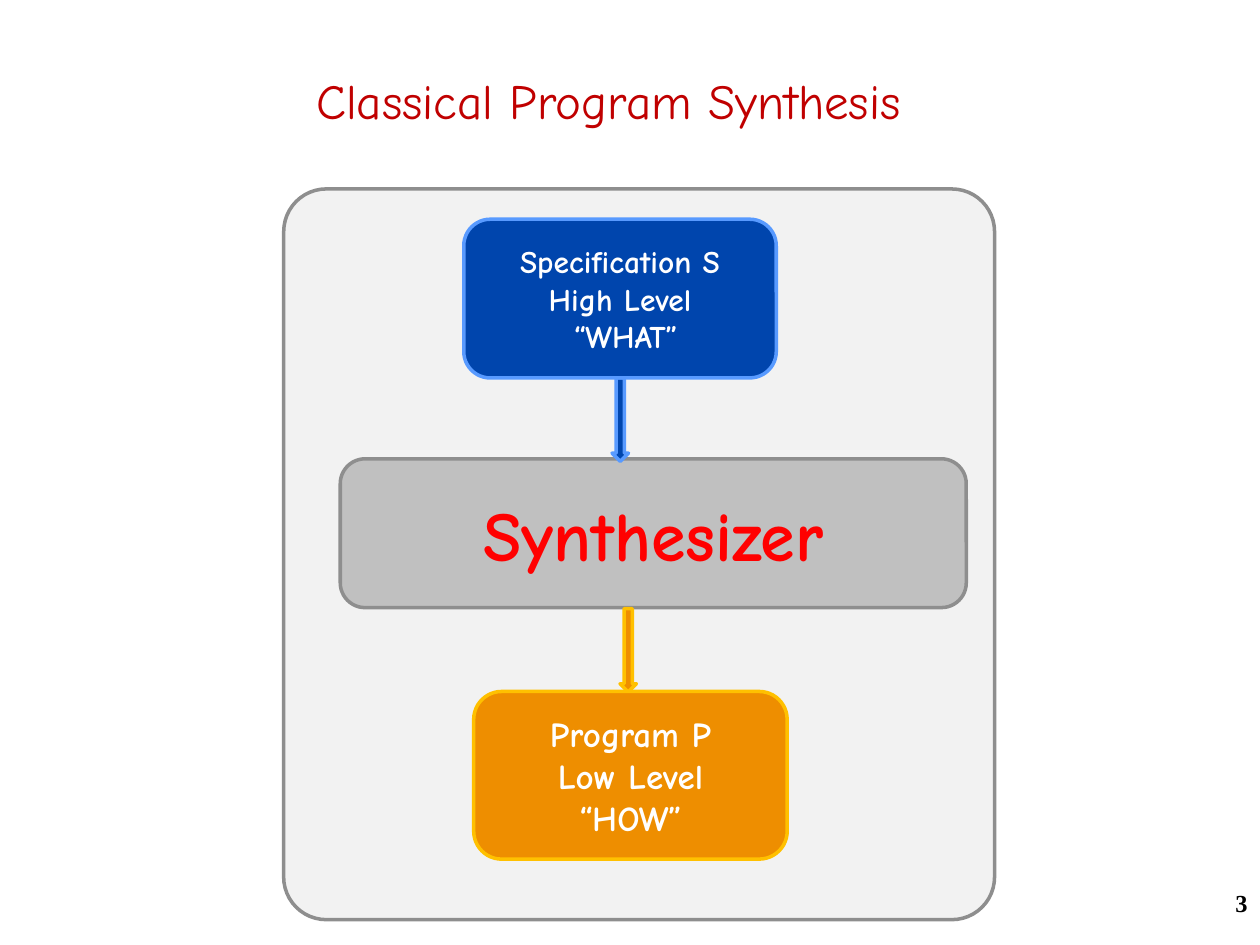
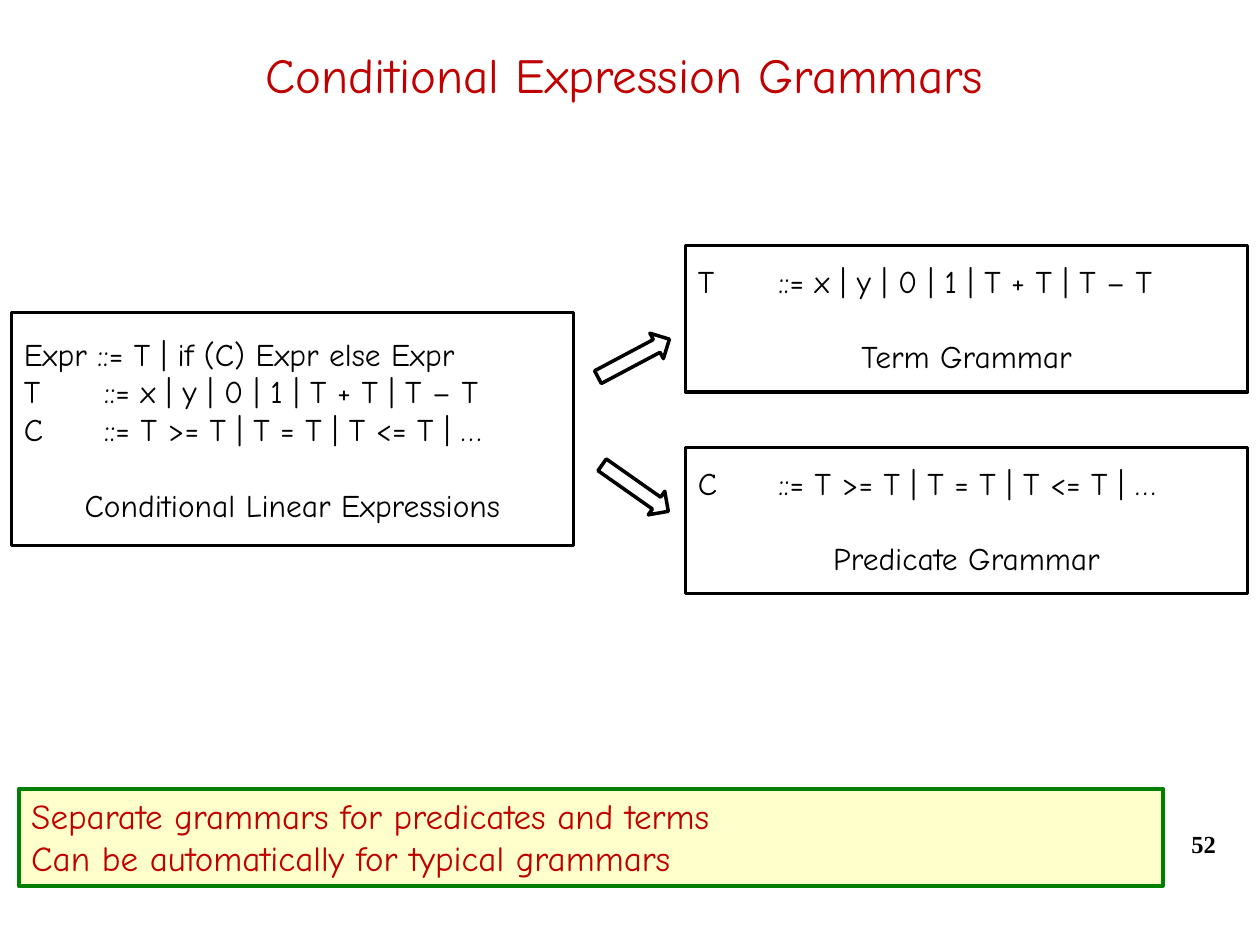
import pptx
import pptx.util
import pptx.dml.color
import pptx.enum.shapes
import pptx.enum.text
import pptx.oxml.ns
import lxml.etree

Cm, Pt = pptx.util.Cm, pptx.util.Pt
RGB = pptx.dml.color.RGBColor
KIND = pptx.enum.shapes.MSO_SHAPE
ALIGN = pptx.enum.text.PP_ALIGN
ANCHOR = pptx.enum.text.MSO_ANCHOR

# Shared look
FONT, SERIF = "Comic Neue", "Times New Roman"
BLACK, WHITE = RGB(0, 0, 0), RGB(255, 255, 255)
CRIMSON, RED = RGB(0xC0, 0, 0), RGB(255, 0, 0)
PALE, SILVER, GREY = RGB(0xF2, 0xF2, 0xF2), RGB(0xC0, 0xC0, 0xC0), RGB(0x8E, 0x8E, 0x8E)
BLUE, SKY = RGB(0, 0x45, 0xAD), RGB(0x58, 0x9A, 0xFF)
ORANGE, GOLD = RGB(0xEE, 0x8E, 0), RGB(0xFF, 0xC0, 0)
CREAM, GREEN = RGB(0xFF, 0xFF, 0xCC), RGB(0, 0x80, 0)

# Grammar rules that stand in more than one box
TERM = "T\t::= x | y | 0 | 1 | T + T | T – T"
TEST = "C\t::= T >= T | T = T | T <= T | …"


def style(frame, size, color, align, bold=False, font=FONT):
    """Give every paragraph of a text frame one look."""
    for para in frame.paragraphs:
        para.alignment = align
        for run in para.runs:
            run.font.name = font
            run.font.size = Pt(size)
            run.font.bold = bold
            run.font.color.rgb = color


def page(deck, title, place, number, corner):
    """Add a slide with its title and slide number."""
    slide = deck.slides.add_slide(deck.slide_layouts[5])
    head = slide.shapes.title
    head.left, head.top, head.width, head.height = map(Cm, place)
    head.text_frame.text = title
    head.text_frame.vertical_anchor = ANCHOR.MIDDLE
    style(head.text_frame, 28, CRIMSON, ALIGN.CENTER)

    note = slide.shapes.add_textbox(*map(Cm, corner), Cm(5.28), Cm(1.27))
    note.text_frame.word_wrap = True
    note.text_frame.text = number
    style(note.text_frame, 14, BLACK, ALIGN.RIGHT, True, SERIF)
    return slide


def block(slide, kind, place, fill, line, width=2):
    """Add a filled and outlined preset shape; place is in cm."""
    shape = slide.shapes.add_shape(kind, *map(Cm, place))
    shape.shadow.inherit = False
    shape.fill.solid()
    shape.fill.fore_color.rgb = fill
    shape.line.color.rgb = line
    shape.line.width = Pt(width)
    return shape


def label(shape, text, size, color, align=ALIGN.CENTER, bold=True):
    """Write text into a shape."""
    shape.text_frame.text = text
    shape.text_frame.vertical_anchor = ANCHOR.MIDDLE
    style(shape.text_frame, size, color, align, bold)


def stop(para, place):
    """Set one left tab stop on a paragraph."""
    qn = pptx.oxml.ns.qn
    tabs = lxml.etree.SubElement(para._p.get_or_add_pPr(), qn("a:tabLst"))
    lxml.etree.SubElement(tabs, qn("a:tab"), pos=str(place), algn="l")


def grammar(slide, place, rules, name):
    """Add a box with grammar rules above a centred name."""
    box = block(slide, KIND.RECTANGLE, place, WHITE, BLACK)
    label(box, "\n".join(rules + [name]), 18, BLACK, ALIGN.LEFT, False)
    *lines, last = box.text_frame.paragraphs
    for para in lines:
        stop(para, Cm(1.62))
    last.alignment = ALIGN.CENTER
    last.space_before = Pt(21.5)


def flow(deck):
    slide = page(deck, "Classical Program Synthesis", (1.47, 0.43, 21.59, 3.18),
                 "3", (20.12, 17.78))

    # Panel and synthesizer
    panel = block(slide, KIND.ROUNDED_RECTANGLE, (5.72, 3.81, 14.33, 14.73), PALE, GREY)
    panel.adjustments[0] = 0.06
    core = block(slide, KIND.ROUNDED_RECTANGLE, (6.86, 9.25, 12.62, 3), SILVER, GREY)
    label(core, "Synthesizer", 40, RED)

    # Input and output, each with its arrow
    steps = [
        ("Specification S\nHigh Level\n “WHAT”", 18, (9.35, 4.42, 6.3, 3.2),
         (12.34, 7.62), BLUE, SKY),
        ("Program P\nLow Level\n“HOW”", 20, (9.55, 13.94, 6.32, 3.38),
         (12.5, 12.27), ORANGE, GOLD),
    ]
    for text, size, place, start, fill, line in steps:
        block(slide, KIND.DOWN_ARROW, (*start, 0.33, 1.68), fill, line)
        box = block(slide, KIND.FLOWCHART_ALTERNATE_PROCESS, place, fill, line)
        label(box, text, size, WHITE)


def split(deck):
    slide = page(deck, "Conditional Expression Grammars", (1.7, 0.64, 21.77, 1.7),
                 "52", (19.48, 16.59))

    # Conclusion
    note = block(slide, KIND.RECTANGLE, (0.38, 15.9, 23.06, 1.96), CREAM, GREEN, 2.25)
    label(note, "Separate grammars for predicates and terms\n"
          "Can be automatically for typical grammars", 20, CRIMSON, ALIGN.LEFT, False)
    note.text_frame.vertical_anchor = ANCHOR.TOP

    # Whole grammar and its two parts
    grammar(slide, (0.23, 6.3, 11.33, 4.7),
            ["Expr ::= T | if (C) Expr else Expr", TERM, TEST],
            "Conditional Linear Expressions")
    grammar(slide, (13.82, 4.95, 11.33, 2.95), [TERM], "Term Grammar")
    grammar(slide, (13.82, 9.02, 11.33, 2.95), [TEST], "Predicate Grammar")

    # Arrows to the parts
    for left, top, turn in [(11.96, 6.93, 332), (11.99, 9.55, 35.1)]:
        arrow = block(slide, KIND.RIGHT_ARROW, (left, top, 1.63, 0.58), WHITE, BLACK)
        arrow.rotation = turn


def main():
    deck = pptx.Presentation()
    deck.slide_width, deck.slide_height = Cm(25.4), Cm(19.05)
    flow(deck)
    split(deck)
    deck.save("out.pptx")


if __name__ == "__main__":
    main()
